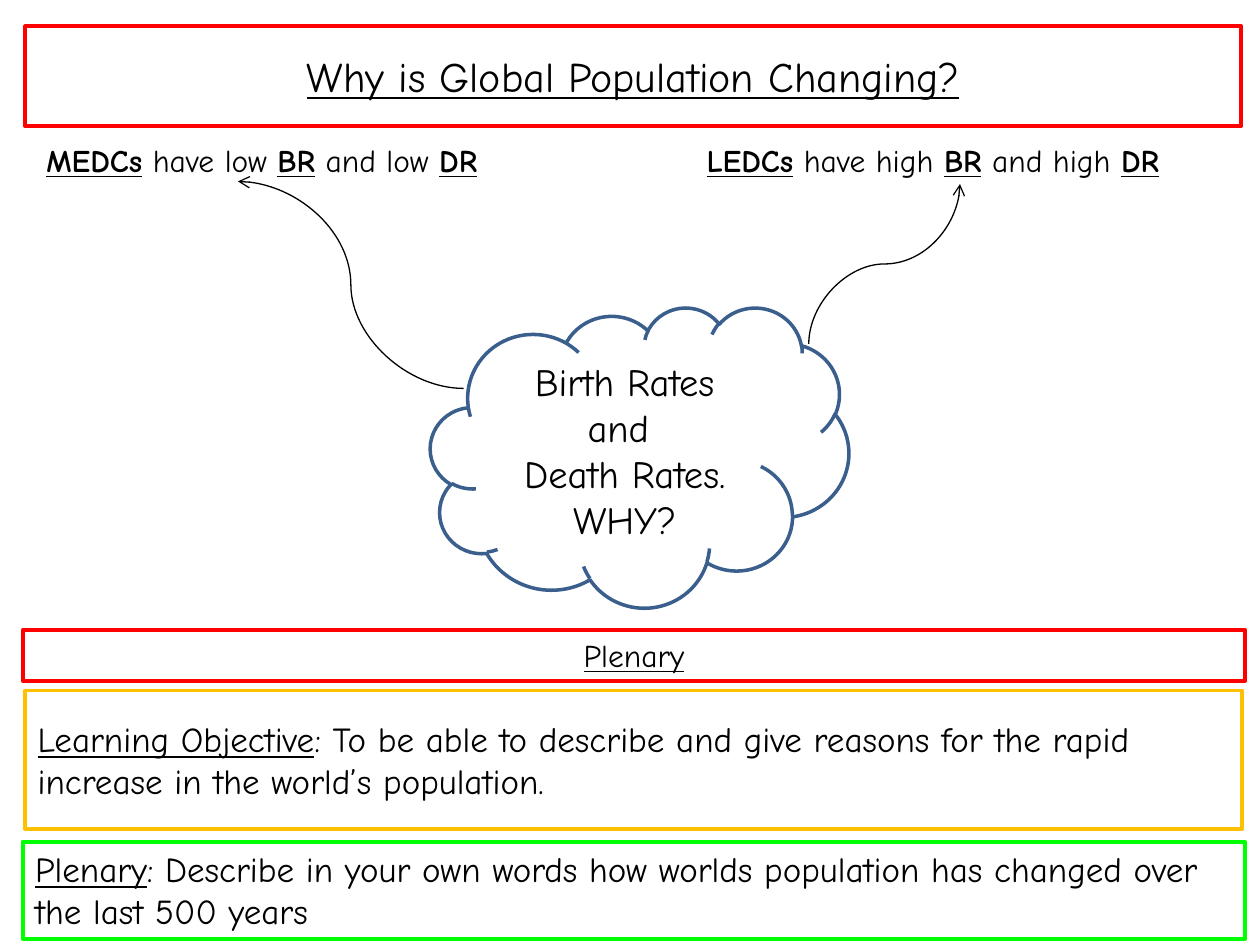
"""Build the lesson slide on why global population is changing."""
from dataclasses import dataclass

from lxml.etree import SubElement
from pptx import Presentation
from pptx.dml.color import RGBColor
from pptx.enum.shapes import MSO_CONNECTOR, MSO_SHAPE
from pptx.enum.text import MSO_ANCHOR, PP_ALIGN
from pptx.oxml.ns import qn
from pptx.slide import Slide
from pptx.util import Pt

COLOURS = {
    "ink": "000000",
    "paper": "FFFFFF",
    "red": "FF0000",
    "amber": "FFC000",
    "green": "00FF00",
    "cloud": "3A5F8C",
}


def colour(name):
    return RGBColor.from_string(COLOURS[name])


def write(frame, *paragraphs, font, size, align=PP_ALIGN.LEFT, anchor=MSO_ANCHOR.TOP):
    """Fill a frame; each paragraph is a list of (text, marks), marks from 'b' and 'u'."""
    frame.word_wrap = True
    frame.vertical_anchor = anchor
    for index, runs in enumerate(paragraphs):
        paragraph = frame.add_paragraph() if index else frame.paragraphs[0]
        paragraph.alignment = align
        for text, marks in runs:
            run = paragraph.add_run()
            run.text = text
            run.font.name = font
            run.font.size = Pt(size)
            run.font.bold = "b" in marks
            run.font.underline = "u" in marks
            run.font.color.rgb = colour("ink")


@dataclass
class LessonSlide:
    slide: Slide
    font: str = "Comic Neue"
    border: float = 2.25
    arrow_width: float = 0.75

    def outline(self, shape, line, width, fill=None):
        if fill:
            shape.fill.solid()
            shape.fill.fore_color.rgb = colour(fill)
        else:
            shape.fill.background()
        shape.line.color.rgb = colour(line)
        shape.line.width = Pt(width)

    def title(self, text, left, top, width, height):
        heading = self.slide.shapes.title
        heading.left, heading.top = Pt(left), Pt(top)
        heading.width, heading.height = Pt(width), Pt(height)
        self.outline(heading, "red", self.border, "paper")
        write(heading.text_frame, [(text, "u")], font=self.font, size=24,
              align=PP_ALIGN.CENTER, anchor=MSO_ANCHOR.MIDDLE)

    def panel(self, box, *paragraphs, line, kind=MSO_SHAPE.RECTANGLE,
              width=None, fill=None, **style):
        panel = self.slide.shapes.add_shape(kind, *map(Pt, box))
        panel.shadow.inherit = False
        self.outline(panel, line, width or self.border, fill)
        write(panel.text_frame, *paragraphs, font=self.font, **style)

    def label(self, box, *paragraphs, **style):
        label = self.slide.shapes.add_textbox(*map(Pt, box))
        write(label.text_frame, *paragraphs, font=self.font, **style)

    def curve(self, start, end, upright=False):
        """Draw a curved arrow; an upright one leaves its start vertically."""
        if upright:
            (x1, y1), (x2, y2) = start, end
            across, down = (x1 + x2) / 2, (y1 + y2) / 2
            reach, rise = (y1 - y2) / 2, (x2 - x1) / 2
            start, end = (across + reach, down + rise), (across - reach, down - rise)
        arrow = self.slide.shapes.add_connector(
            MSO_CONNECTOR.CURVE, *map(Pt, (*start, *end)))
        arrow.line.color.rgb = colour("ink")
        arrow.line.width = Pt(self.arrow_width)
        properties = arrow._element.spPr
        if upright:
            properties.find(qn("a:xfrm")).set("rot", "5400000")
        SubElement(properties.find(qn("a:ln")), qn("a:tailEnd"), type="arrow")
        SubElement(properties, qn("a:effectLst"))


def main():
    deck = Presentation()
    deck.slide_width, deck.slide_height = Pt(720), Pt(540)
    lesson = LessonSlide(deck.slides.add_slide(deck.slide_layouts[5]))

    lesson.title("Why is Global Population Changing?", 14.4, 15, 695, 57)
    lesson.panel((246, 175.5, 239, 171.5),
                 [("Birth Rates and ", "")], [("Death Rates.", "")], [("WHY?", "")],
                 line="cloud", kind=MSO_SHAPE.CLOUD, width=2, fill="paper",
                 size=22, align=PP_ALIGN.CENTER, anchor=MSO_ANCHOR.MIDDLE)
    lesson.curve((462.2, 196.6), (548.6, 105.2), upright=True)
    lesson.curve((265, 222), (136, 103.7))

    for countries, level, left, width in (("MEDCs", "low", 19.4, 292.5),
                                          ("LEDCs", "high", 396.7, 309.6)):
        lesson.label((left, 77, width, 29),
                     [(countries, "bu"), (f" have {level} ", ""), ("BR", "bu"),
                      (f" and {level} ", ""), ("DR", "bu")], size=18)

    lesson.panel((13, 360, 698.5, 29), [("Plenary", "u")],
                 line="red", size=18, align=PP_ALIGN.CENTER)
    lesson.panel((14.4, 394.6, 695.5, 79.2),
                 [("Learning Objective", "u"),
                  (": To be able to describe and give reasons for the rapid "
                   "increase in the world’s population.", "")],
                 line="amber", size=20, anchor=MSO_ANCHOR.MIDDLE)
    lesson.panel((13, 481, 698.5, 55.5),
                 [("Plenary", "u"),
                  (": Describe in your own words how worlds population has "
                   "changed over the last 500 years", "")],
                 line="green", size=20)
    deck.save("out.pptx")


if __name__ == "__main__":
    main()
